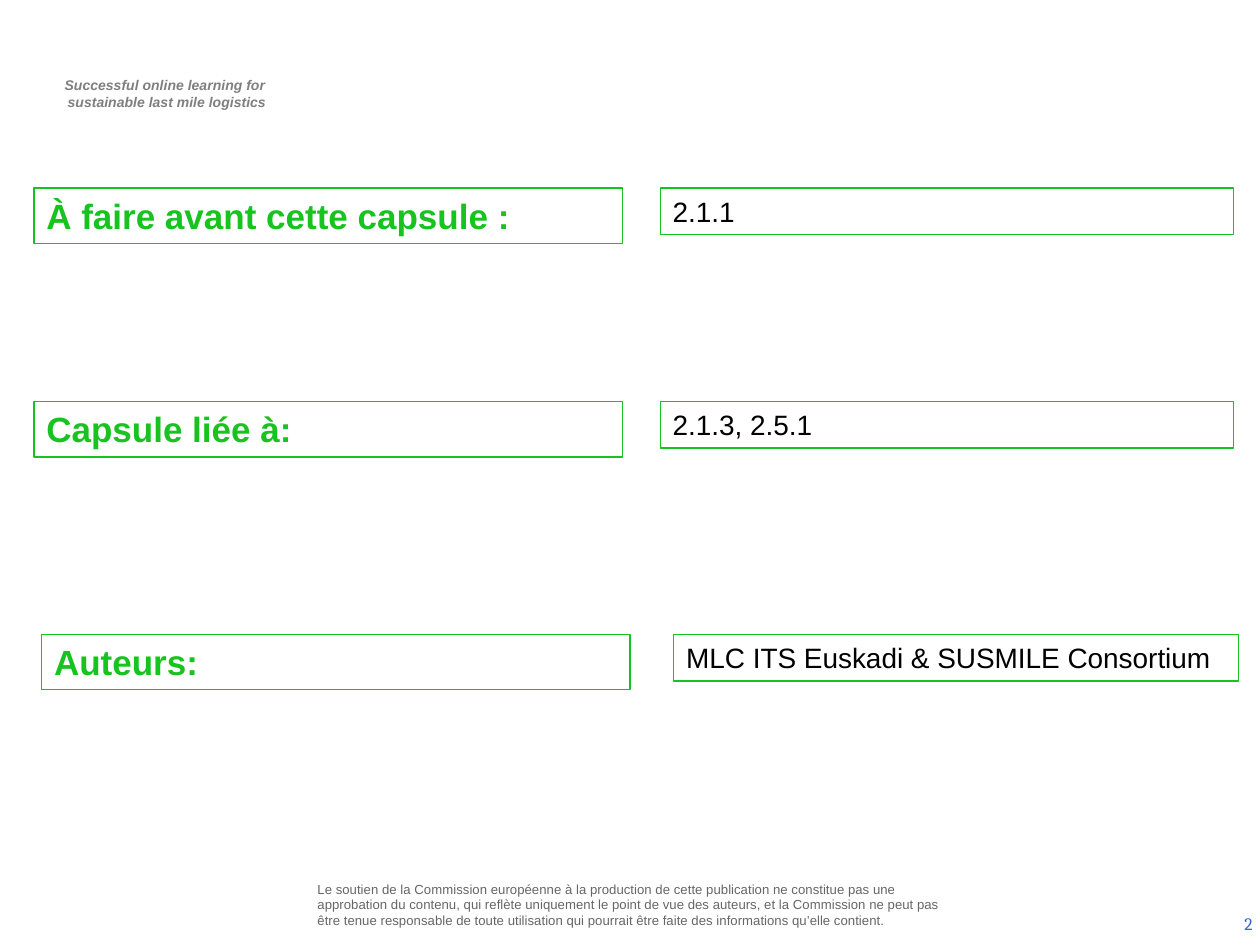
from pptx import Presentation
from pptx.dml.color import RGBColor
from pptx.enum.shapes import MSO_SHAPE
from pptx.enum.text import MSO_ANCHOR, PP_ALIGN
from pptx.util import Pt

LEFT, CENTER, RIGHT = PP_ALIGN.LEFT, PP_ALIGN.CENTER, PP_ALIGN.RIGHT
TOP, MIDDLE = MSO_ANCHOR.TOP, MSO_ANCHOR.MIDDLE
RECTANGLE = MSO_SHAPE.RECTANGLE

GREEN = RGBColor(0x18, 0xC3, 0x20)
WHITE = RGBColor(0xFF, 0xFF, 0xFF)
BLACK = RGBColor(0x00, 0x00, 0x00)
GRAY = RGBColor(0x7F, 0x7F, 0x7F)
DARK_GRAY = RGBColor(0x66, 0x66, 0x66)
BLUE = RGBColor(0x33, 0x66, 0xCC)

TAGLINE = ["Successful online learning for ", "sustainable last mile logistics"]
DISCLAIMER = (
    "Le soutien de la Commission européenne à la production de cette publication "
    "ne constitue pas une approbation du contenu, qui reflète uniquement le point "
    "de vue des auteurs, et la Commission ne peut pas être tenue responsable de "
    "toute utilisation qui pourrait être faite des informations qu’elle contient."
)
PAGE_NUMBER = "2"

LABEL_WIDTH, LABEL_HEIGHT, VALUE_HEIGHT = 336.24, 31.6, 26.6
# top, label, label left, value, value left, value width
ROWS = [
    (107.5, "À faire avant cette capsule :", 19.4, "2.1.1", 377.3, 327.6),
    (229.5, "Capsule liée à:", 19.4, "2.1.3, 2.5.1", 377.3, 327.6),
    (362.6, "Auteurs:", 23.8, "MLC ITS Euskadi & SUSMILE Consortium", 385, 322.6),
]


def write(shape, lines, size, color, font="Arial", bold=False, italic=False,
          align=LEFT, anchor=TOP, margins=(7.2, 3.6), indent=0):
    """Fill a shape with paragraphs; margins are (sides, top and bottom)."""
    frame = shape.text_frame
    frame.word_wrap = True
    frame.vertical_anchor = anchor
    frame.margin_left = frame.margin_right = Pt(margins[0])
    frame.margin_top = frame.margin_bottom = Pt(margins[1])
    for index, line in enumerate(lines):
        paragraph = frame.paragraphs[0] if index == 0 else frame.add_paragraph()
        paragraph.text = line
        paragraph.alignment = align
        if indent:
            paragraph._p.get_or_add_pPr().set("marL", str(Pt(indent)))
        paragraph.font.name = font
        paragraph.font.size = Pt(size)
        paragraph.font.bold = bold
        paragraph.font.italic = italic
        paragraph.font.color.rgb = color


def add_text(slide, box, lines, size, color, **style):
    write(slide.shapes.add_textbox(*map(Pt, box)), lines, size, color, **style)


def add_framed_text(slide, box, text, size, color, bold=False):
    shape = slide.shapes.add_shape(RECTANGLE, *map(Pt, box))
    shape.shadow.inherit = False
    shape.fill.solid()
    shape.fill.fore_color.rgb = WHITE
    shape.line.color.rgb = GREEN
    shape.line.width = Pt(0.75)
    write(shape, [text], size, color, bold=bold)


def main():
    presentation = Presentation()
    presentation.slide_width, presentation.slide_height = Pt(720), Pt(540)
    slide = presentation.slides.add_slide(presentation.slide_layouts[6])

    add_text(slide, (20.9, 40.3, 146.2, 26.6), TAGLINE, 8, GRAY,
             bold=True, italic=True, align=CENTER, indent=2.88)
    add_text(slide, (178.5, 499, 366.5, 36), [DISCLAIMER], 7.5, DARK_GRAY,
             anchor=MIDDLE, margins=(2.88, 2.88))
    add_text(slide, (555.1, 513.4, 167.8, 28.8), [PAGE_NUMBER], 10, BLUE,
             font="Cambria", align=RIGHT, anchor=MIDDLE)

    for top, label, label_left, value, value_left, value_width in ROWS:
        add_framed_text(slide, (label_left, top, LABEL_WIDTH, LABEL_HEIGHT),
                        label, 20, GREEN, bold=True)
        add_framed_text(slide, (value_left, top, value_width, VALUE_HEIGHT),
                        value, 16, BLACK)

    presentation.save("out.pptx")


if __name__ == "__main__":
    main()
